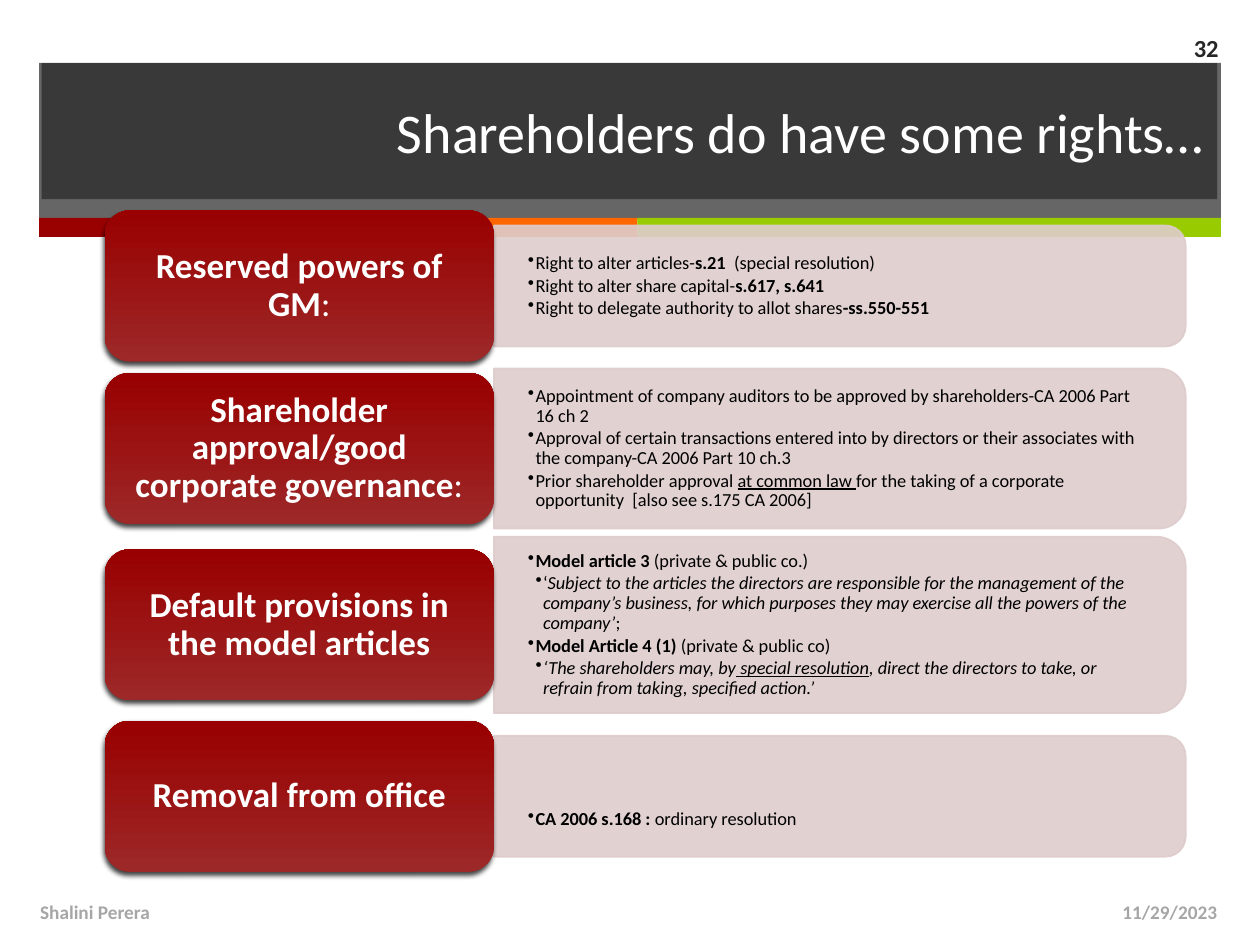
"""Build a slide on the rights that shareholders hold."""
from pptx import Presentation
from pptx.dml.color import RGBColor
from pptx.enum.shapes import MSO_SHAPE
from pptx.enum.text import MSO_ANCHOR, PP_ALIGN
from pptx.oxml.ns import qn
from pptx.oxml.xmlchemy import OxmlElement
from pptx.util import Inches, Pt

RECTANGLE = MSO_SHAPE.RECTANGLE
ROUNDED = MSO_SHAPE.ROUNDED_RECTANGLE
ROUNDED_TOP = MSO_SHAPE.ROUND_2_SAME_RECTANGLE
MIDDLE = MSO_ANCHOR.MIDDLE
LEFT, CENTER, RIGHT = PP_ALIGN.LEFT, PP_ALIGN.CENTER, PP_ALIGN.RIGHT

CARD_LEFT, CARD_WIDTH, CARD_HEIGHT = 0.83, 3.09, 1.2
PANEL_LEFT, PANEL_WIDTH = CARD_LEFT + CARD_WIDTH, 5.49
BULLET_INDENT = 0.06

STRIPES = [(0.31, 1.75, "990000"), (2.06, 3, "FF6600"), (5.06, 4.63, "99CC00")]

# Each row: centre, panel height, text shift, label runs, bullets as (level, runs).
ROWS = [
    (2.27, 0.96, 0, [("Reserved powers of GM", "b"), (":", "")], [
        (1, [("Right to alter articles-", ""), ("s.21  ", "b"),
             ("(special resolution)", "")]),
        (1, [("Right to alter share capital-", ""), ("s.617, s.641", "b")]),
        (1, [("Right to delegate authority to allot shares", ""),
             ("-ss.550-551", "b")]),
    ]),
    (3.56, 1.27, 0,
     [("Shareholder approval/good corporate governance", "b"), (":", "")], [
        (1, [("Appointment of company auditors to be approved by "
              "shareholders-CA 2006 Part 16 ch 2", "")]),
        (1, [("Approval of certain transactions entered into by directors or "
              "their associates with the company-CA 2006 Part 10 ch.3", "")]),
        (1, [("Prior shareholder approval ", ""), ("at common law ", "u"),
             ("for the taking of a corporate opportunity  "
              "[also see s.175 CA 2006]", "")]),
     ]),
    (4.96, 1.4, 0, [("Default provisions in the model articles", "b")], [
        (1, [("Model article 3", "b"), (" (private & public co.)", "")]),
        (2, [("‘", ""),
             ("Subject to the articles the directors are responsible for the "
              "management of the company’s business, for which purposes they "
              "may exercise all the powers of the company’", "i"), (";", "")]),
        (1, [("Model Article 4 (1)", "b"), (" (private & public co)", "")]),
        (2, [("‘The shareholders may, by", "i"), (" special resolution", "iu"),
             (", direct the directors to take, or refrain from taking, "
              "specified action.’", "i")]),
    ]),
    (6.32, 0.96, 0.18, [("Removal from office", "b")], [
        (1, [("CA 2006 s.168 : ", "b"), ("ordinary resolution", "")]),
    ]),
]


def color(hex_string):
    """Turn a hex string into a colour."""
    return RGBColor.from_string(hex_string)


def add_child(parent, tag, **attributes):
    """Append an XML element with attributes to its parent."""
    child = OxmlElement(tag)
    for name, value in attributes.items():
        child.set(name, str(value))
    parent.append(child)
    return child


class SlideBuilder:
    """Hold the style and the current slide."""

    font = "Calibri"

    def __init__(self, slide):
        """Keep the slide to draw on."""
        self.slide = slide

    def shape(self, kind, left, top, width, height, fill, opacity=100, line=None):
        """Add a plain shape with an optional outline and opacity."""
        shape = self.slide.shapes.add_shape(
            kind, Inches(left), Inches(top), Inches(width), Inches(height))
        shape.shadow.inherit = False
        shape.fill.solid()
        shape.fill.fore_color.rgb = color(fill)
        if line:
            shape.line.color.rgb = color(line)
            shape.line.width = Pt(1)
        else:
            shape.line.fill.background()
        if opacity < 100:
            for node in list(shape._element.spPr.iter(qn("a:srgbClr"))):
                add_child(node, "a:alpha", val=opacity * 1000)
        return shape

    def frame(self, shape, horizontal=0.1, vertical=0.05):
        """Prepare a wrapped text frame centred vertically."""
        frame = shape.text_frame
        frame.word_wrap = True
        frame.vertical_anchor = MIDDLE
        frame.margin_left = frame.margin_right = Inches(horizontal)
        frame.margin_top = frame.margin_bottom = Inches(vertical)
        return frame

    def runs(self, paragraph, runs, size, hex_string, alignment=LEFT):
        """Fill a paragraph with runs styled by the letters b, i and u."""
        paragraph.alignment = alignment
        for text, style in runs:
            run = paragraph.add_run()
            run.text = text
            run.font.name = self.font
            run.font.size = Pt(size)
            run.font.color.rgb = color(hex_string)
            run.font.bold = "b" in style
            run.font.italic = "i" in style
            run.font.underline = "u" in style

    def text(self, left, top, width, height, text, size, hex_string,
             alignment=LEFT, style="b"):
        """Add a text box with one line of text."""
        box = self.slide.shapes.add_textbox(
            Inches(left), Inches(top), Inches(width), Inches(height))
        paragraph = self.frame(box).paragraphs[0]
        self.runs(paragraph, [(text, style)], size, hex_string, alignment)

    def panel(self, middle, height):
        """Add a pale panel turned so that its right corners are round."""
        center = PANEL_LEFT + PANEL_WIDTH / 2
        panel = self.shape(ROUNDED_TOP, center - height / 2,
                           middle - PANEL_WIDTH / 2, height, PANEL_WIDTH,
                           "DECCCC", 90, "DECCCC")
        panel.rotation = 90

    def bullets(self, middle, panel_height, items):
        """Add a bulleted list inside a panel."""
        height = panel_height * 0.9
        box = self.slide.shapes.add_textbox(
            Inches(PANEL_LEFT), Inches(middle - height / 2),
            Inches(PANEL_WIDTH - panel_height * 0.05), Inches(height))
        frame = self.frame(box, 0.27, 0.14)
        for index, (level, runs) in enumerate(items):
            paragraph = frame.add_paragraph() if index else frame.paragraphs[0]
            paragraph.line_spacing = 0.9
            paragraph.space_after = Pt(1.6)
            self.runs(paragraph, runs, 10.5, "000000")
            properties = paragraph._p.get_or_add_pPr()
            properties.set("marL", str(Inches(level * BULLET_INDENT)))
            properties.set("indent", str(-Inches(BULLET_INDENT)))
            add_child(properties, "a:buChar", char="•")

    def card(self, middle, runs):
        """Add a red gradient card with a shadow and a label."""
        card = self.shape(ROUNDED, CARD_LEFT, middle - CARD_HEIGHT / 2,
                          CARD_WIDTH, CARD_HEIGHT, "990000")
        card.fill.gradient()
        card.fill.gradient_angle = 90
        for stop, hex_string in zip(card.fill.gradient_stops, ("9D2828", "990000")):
            stop.color.rgb = color(hex_string)
        effects = card._element.spPr.find(qn("a:effectLst"))
        shadow = add_child(effects, "a:outerShdw", blurRad=Pt(3), dist=Pt(2),
                           dir=110 * 60000, rotWithShape=0)
        black = add_child(shadow, "a:srgbClr", val="000000")
        add_child(black, "a:alpha", val=75000)
        paragraph = self.frame(card, 0.14, 0.1).paragraphs[0]
        paragraph.line_spacing = 0.9
        self.runs(paragraph, runs, 20, "FFFFFF", CENTER)


def main():
    """Build and save the slide."""
    presentation = Presentation()
    presentation.slide_width, presentation.slide_height = Inches(10), Inches(7.5)
    slide = presentation.slides.add_slide(presentation.slide_layouts[6])
    builder = SlideBuilder(slide)
    builder.shape(RECTANGLE, 0.31, 0.5, 9.38, 1.24, "262626", 70)
    for left, width, fill in STRIPES:
        builder.shape(RECTANGLE, left, 1.73, width, 0.15, fill)
    title = builder.shape(RECTANGLE, 0.33, 0.5, 9.33, 1.08, "262626", 70)
    builder.runs(builder.frame(title).paragraphs[0],
                 [("Shareholders do have some rights…", "")], 32, "FFFFFF", RIGHT)
    for middle, height, shift, label, items in ROWS:
        builder.panel(middle, height)
        builder.bullets(middle + shift, height, items)
        builder.card(middle, label)
    builder.text(7.43, 7.04, 2.33, 0.4, "11/29/2023", 11, "A6A6A6", RIGHT)
    builder.text(0.22, 7.04, 6.7, 0.4, "Shalini Perera", 11, "A6A6A6")
    builder.text(9.08, 0.18, 0.69, 0.39, "32", 14, "262626", RIGHT)
    presentation.save("out.pptx")


if __name__ == "__main__":
    main()
